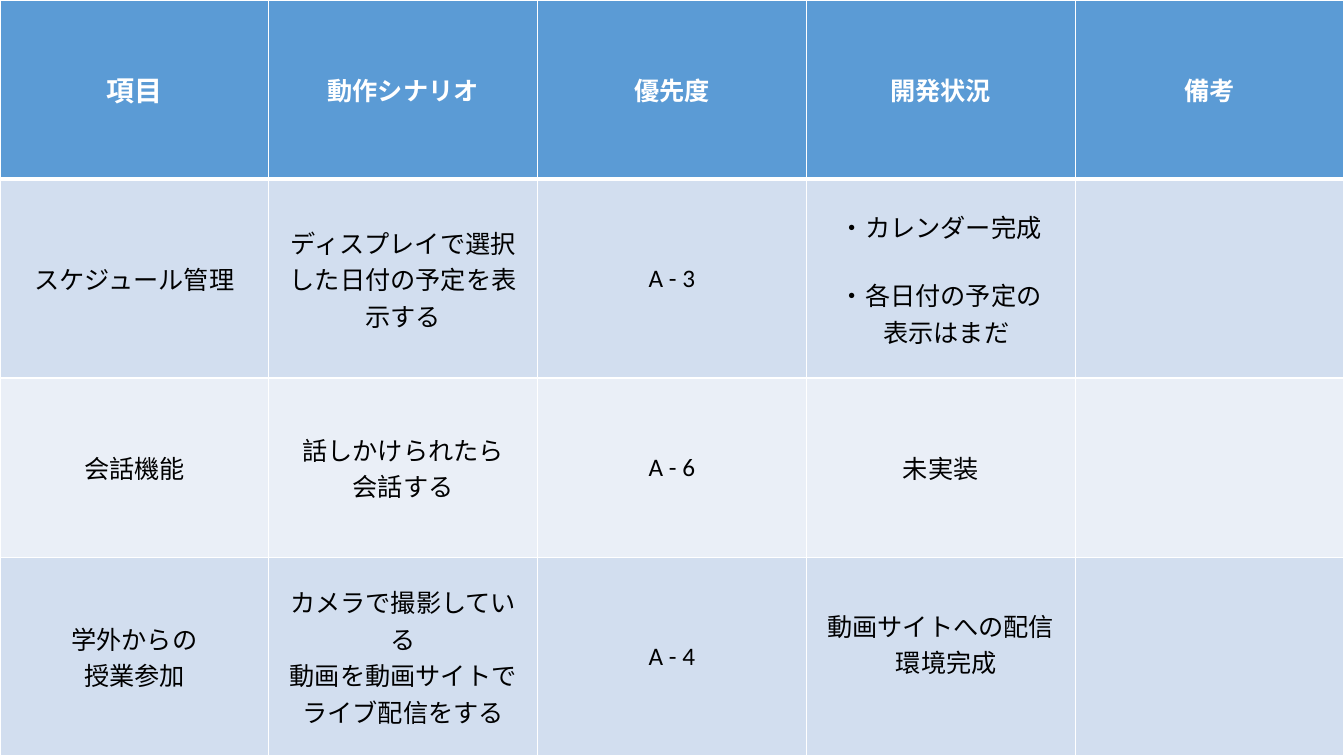
from lxml import etree
from pptx import Presentation
from pptx.dml.color import RGBColor
from pptx.enum.text import MSO_ANCHOR, PP_ALIGN
from pptx.oxml.ns import qn
from pptx.util import Pt

CENTER, MIDDLE = PP_ALIGN.CENTER, MSO_ANCHOR.MIDDLE

# Content: each cell is a tuple of lines
HEADINGS = ["項目", "動作シナリオ", "優先度", "開発状況", "備考"]
FEATURES = [
    [("スケジュール管理",), ("ディスプレイで選択した日付の予定を表示する",), ("A - 3",),
     ("・カレンダー完成", "・各日付の予定の", "表示はまだ"), ()],
    [("会話機能",), ("話しかけられたら", "会話する"), ("A - 6",), ("未実装",), ()],
    [("学外からの", "授業参加"),
     ("カメラで撮影している", "動画を動画サイトで", "ライブ配信をする"), ("A - 4",),
     ("動画サイトへの配信", "環境完成"), ()],
]
INDENTED = {"表示はまだ", "環境完成"}
SPACE_BEFORE = {"・各日付の予定の": 23}
BOTTOM_MARGIN = {(3, 3): 22}  # (row, column): raises the text

COLORS = {"header": "5B9BD5", "odd": "D2DEEF", "even": "EAEFF7",
          "white": "FFFFFF", "text": "000000"}
FONT = "Calibri"
WIDTH, HEIGHT = 960, 540
ROW_HEIGHTS = [128, 142, 128, 142]


def set_borders(cell, top, bottom):
    properties = cell._tc.get_or_add_tcPr()
    sides = [("a:lnL", 1), ("a:lnR", 1), ("a:lnT", top), ("a:lnB", bottom)]
    for position, (tag, width) in enumerate(sides):
        line = etree.Element(qn(tag), w=str(Pt(width)))
        fill = etree.SubElement(line, qn("a:solidFill"))
        etree.SubElement(fill, qn("a:srgbClr"), val=COLORS["white"])
        properties.insert(position, line)


def write_lines(cell, lines, size, color, bold):
    frame = cell.text_frame
    for index, text in enumerate(lines):
        para = frame.add_paragraph() if index else frame.paragraphs[0]
        para.text = text
        para.alignment = CENTER
        para.font.name = FONT
        para.font.size = Pt(size)
        para.font.bold = bold
        para.font.color.rgb = RGBColor.from_string(color)
        if text in SPACE_BEFORE:
            para.space_before = Pt(SPACE_BEFORE[text])
        if text in INDENTED:
            para._p.get_or_add_pPr().set("marL", str(Pt(8)))


deck = Presentation()
deck.slide_width, deck.slide_height = Pt(WIDTH), Pt(HEIGHT)
page = deck.slides.add_slide(deck.slide_layouts[6])

# Table filling the page
rows = [[(heading,) for heading in HEADINGS]] + FEATURES
table = page.shapes.add_table(len(rows), len(HEADINGS), 0, 0,
                              Pt(WIDTH), Pt(HEIGHT)).table
for column in table.columns:
    column.width = Pt(WIDTH / len(HEADINGS))

for r, row in enumerate(rows):
    table.rows[r].height = Pt(ROW_HEIGHTS[r])
    header = r == 0
    fill = "header" if header else ("odd" if r % 2 else "even")
    for c, lines in enumerate(row):
        cell = table.cell(r, c)
        cell.vertical_anchor = MIDDLE
        cell.fill.solid()
        cell.fill.fore_color.rgb = RGBColor.from_string(COLORS[fill])
        set_borders(cell, 3 if r == 1 else 1, 3 if header else 1)
        if (r, c) in BOTTOM_MARGIN:
            cell.margin_bottom = Pt(BOTTOM_MARGIN[r, c])
        write_lines(cell, lines, 20 if header and c == 0 else 18,
                    COLORS["white" if header else "text"], header)

deck.save("out.pptx")
